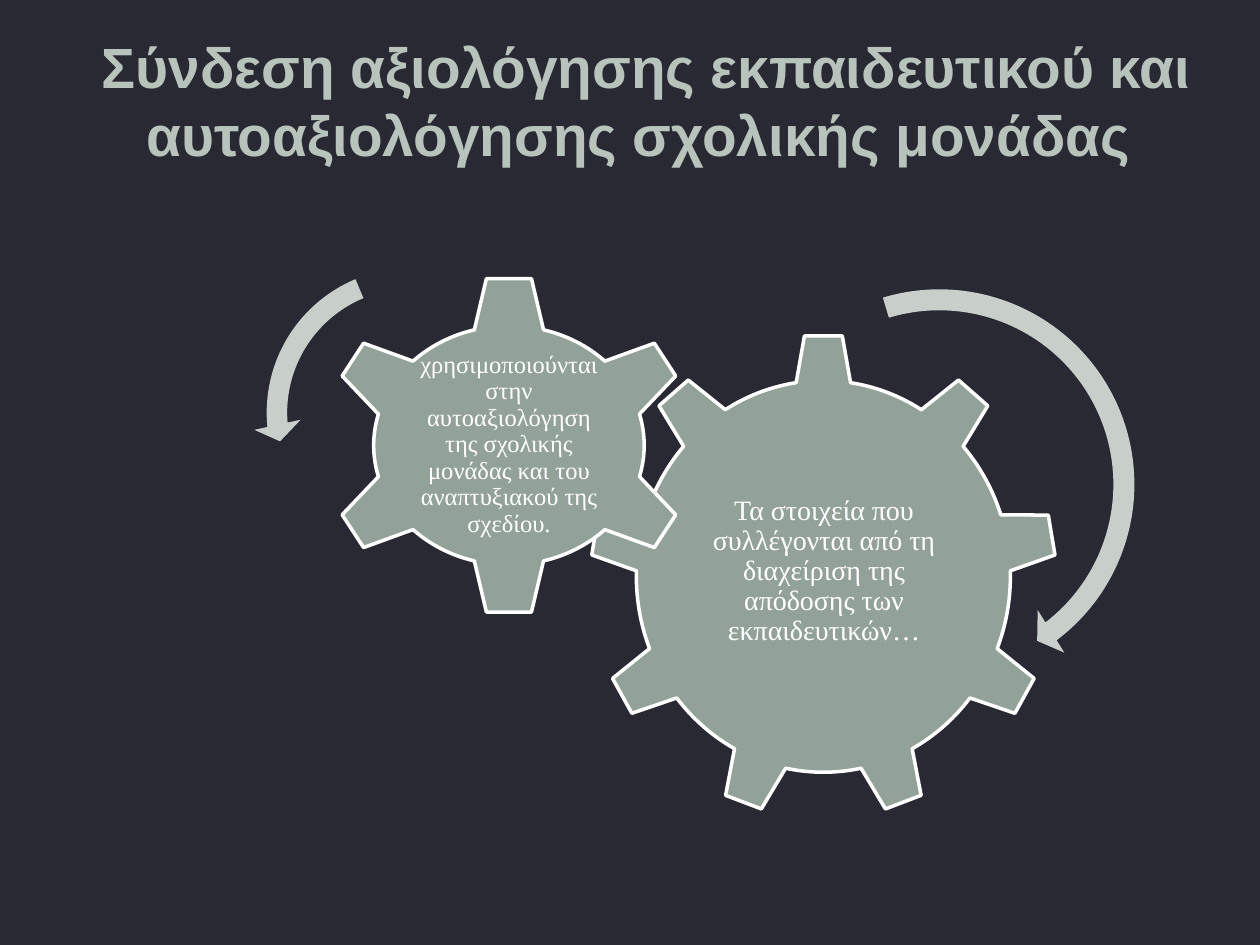
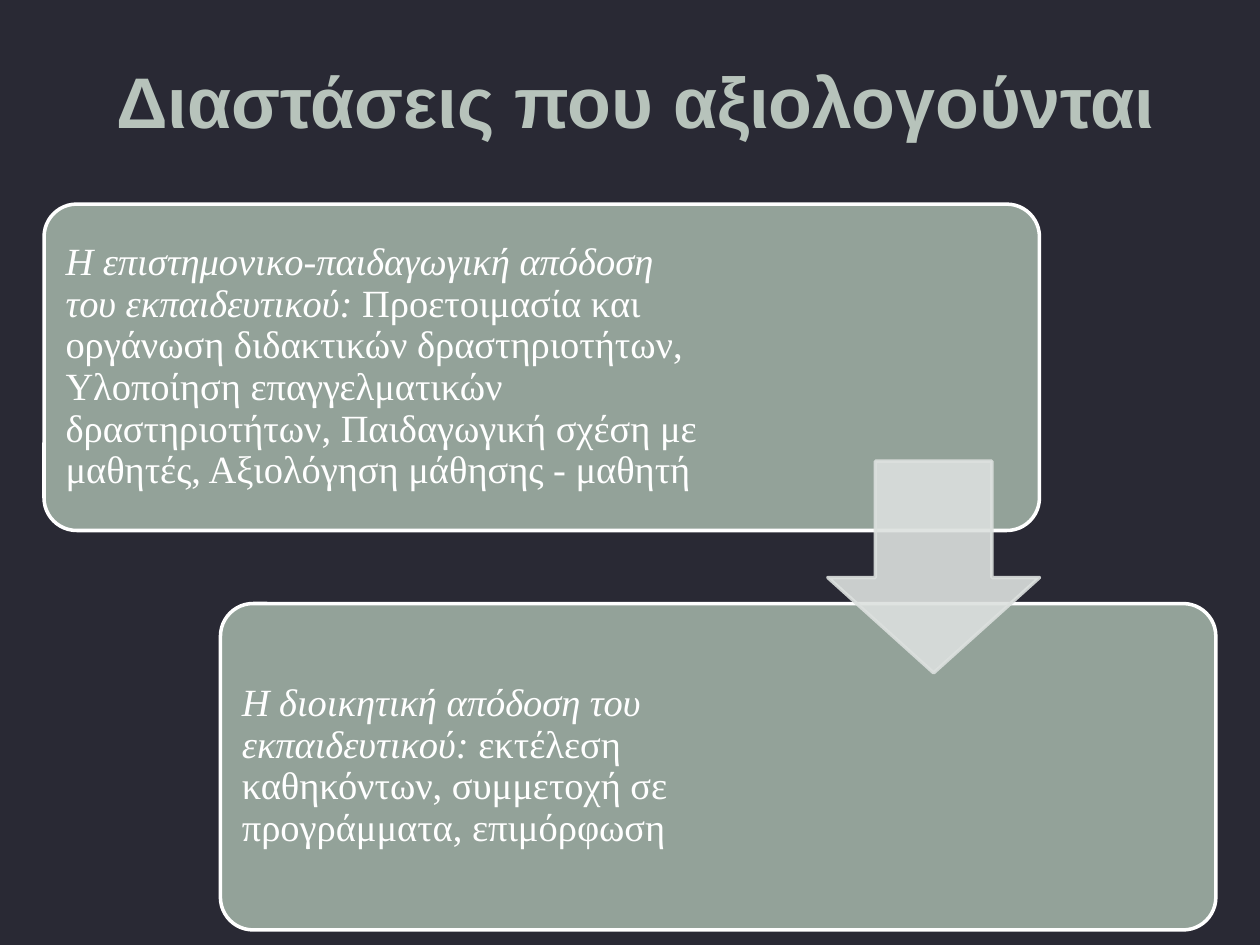
from dataclasses import dataclass

from lxml import etree
from pptx import Presentation, util as u
from pptx.dml.color import RGBColor
from pptx.enum import shapes, text
from pptx.oxml.ns import qn


@dataclass(frozen=True)
class Theme:
    back: str = "292934"
    title: str = "B7C3BB"
    body: str = "93A299"
    arc: str = "C8CECA"
    arrow: str = "DCE0DE"
    white: str = "FFFFFF"
    head: str = "Arial"
    serif: str = "Times New Roman"
    long: float = 32.4
    short: float = 41
    card: float = 22
    large: float = 16
    small: float = 14
    edge: float = 2


KIND = shapes.MSO_SHAPE
ALIGN = text.PP_ALIGN


class Deck:
    def __init__(self, theme):
        self.theme = theme
        self.show = Presentation()
        self.show.slide_width = u.Inches(10)
        self.show.slide_height = u.Inches(7.5)
        self.slide = None

    def page(self, title, size):
        self.slide = self.show.slides.add_slide(self.show.slide_layouts[6])
        fill = self.slide.background.fill
        fill.solid()
        fill.fore_color.rgb = RGBColor.from_string(self.theme.back)
        self.text((0.67, 0.25, 8.92, 1.08), [(title, False)], size,
                  font=self.theme.head, color=self.theme.title,
                  bold=True, pad=(0.1, 0.05), space=1.0)

    def text(self, place, runs, size, font=None, color=None, bold=False,
             align=ALIGN.CENTER, pad=(0.02, 0.02), space=0.9):
        box = self.slide.shapes.add_textbox(*map(u.Inches, place))
        frame = box.text_frame
        frame.word_wrap = True
        frame.vertical_anchor = text.MSO_ANCHOR.MIDDLE
        frame.margin_left = frame.margin_right = u.Inches(pad[0])
        frame.margin_top = frame.margin_bottom = u.Inches(pad[1])
        para = frame.paragraphs[0]
        para.alignment = align
        para.line_spacing = space
        for words, slant in runs:
            run = para.add_run()
            run.text = words
            run.font.name = font or self.theme.serif
            run.font.size = u.Pt(size)
            run.font.bold = bold
            run.font.italic = slant
            run.font.color.rgb = RGBColor.from_string(color or self.theme.white)

    def shape(self, kind, place, fill, line=None, adjust=(), alpha=None):
        item = self.slide.shapes.add_shape(kind, *map(u.Inches, place))
        item.shadow.inherit = False
        for spot, value in enumerate(adjust):
            item.adjustments[spot] = value
        item.fill.solid()
        item.fill.fore_color.rgb = RGBColor.from_string(fill)
        if line:
            item.line.color.rgb = RGBColor.from_string(line)
            item.line.width = u.Pt(self.theme.edge)
        else:
            item.line.fill.background()
        if alpha:
            for color in item.element.spPr.iter(qn("a:srgbClr")):
                etree.SubElement(color, qn("a:alpha")).set("val", str(alpha * 1000))

    def gear(self, kind, place, area, words, size):
        self.shape(kind, place, self.theme.body, self.theme.white)
        self.text(area, [(words, False)], size)

    def arc(self, kind, left, top, side, adjust):
        self.shape(kind, (left, top, side, side), self.theme.arc, adjust=adjust)

    def card(self, left, top, width, lead, words):
        high, inset = 2.59, 0.08
        self.shape(KIND.ROUNDED_RECTANGLE, (left, top, 7.9, high),
                   self.theme.body, self.theme.white, [0.1])
        self.text((left + inset, top + inset, width, high - 2 * inset),
                  [(lead, True), (words, False)], self.theme.card,
                  align=ALIGN.LEFT, pad=(0.09, 0.09))

    def arrow(self, left, top, side):
        self.shape(KIND.DOWN_ARROW, (left, top, side, side), self.theme.arrow,
                   self.theme.arrow, [0.55, 0.45], alpha=90)


def gears(deck):
    deck.page("Σύνδεση αξιολόγησης εκπαιδευτικού και αυτοαξιολόγησης "
              "σχολικής μονάδας ", deck.theme.long)
    deck.gear(KIND.GEAR_9, (4.68, 2.65, 3.71, 3.85), (5.43, 3.54, 2.22, 1.99),
              "Τα στοιχεία που συλλέγονται από τη διαχείριση της απόδοσης "
              "των εκπαιδευτικών…", deck.theme.large)
    deck.gear(KIND.GEAR_6, (2.56, 2.18, 2.96, 2.71), (3.28, 2.86, 1.52, 1.34),
              "χρησιμοποιούνται στην αυτοαξιολόγηση της σχολικής μονάδας "
              "και του αναπτυξιακού της σχεδίου.", deck.theme.small)
    deck.arc(KIND.CIRCULAR_ARROW, 5.79, 2.18, 3.33,
             [0.05, 3.13, 31.65, 151.91, 0.06])
    deck.arc(KIND.LEFT_CIRCULAR_ARROW, 2.01, 2.02, 2.51,
             [0.065, 4.3, 104.89, 148.38, 0.075])


def cards(deck):
    deck.page("Διαστάσεις που αξιολογούνται ", deck.theme.short)
    items = [
        (5.22, "Η επιστημονικο-παιδαγωγική απόδοση του εκπαιδευτικού: ",
         "Προετοιμασία και οργάνωση διδακτικών δραστηριοτήτων, Υλοποίηση "
         "επαγγελματικών δραστηριοτήτων, Παιδαγωγική σχέση με μαθητές, "
         "Αξιολόγηση μάθησης - μαθητή"),
        (4.67, "Η διοικητική απόδοση του εκπαιδευτικού: ",
         "εκτέλεση καθηκόντων, συμμετοχή σε προγράμματα, επιμόρφωση"),
    ]
    for step, (width, lead, words) in enumerate(items):
        deck.card(0.35 + 1.4 * step, 1.62 + 3.17 * step, width, lead, words)
    deck.arrow(6.57, 3.66, 1.68)


def main():
    deck = Deck(Theme())
    gears(deck)
    cards(deck)
    deck.show.save("out.pptx")


if __name__ == "__main__":
    main()
